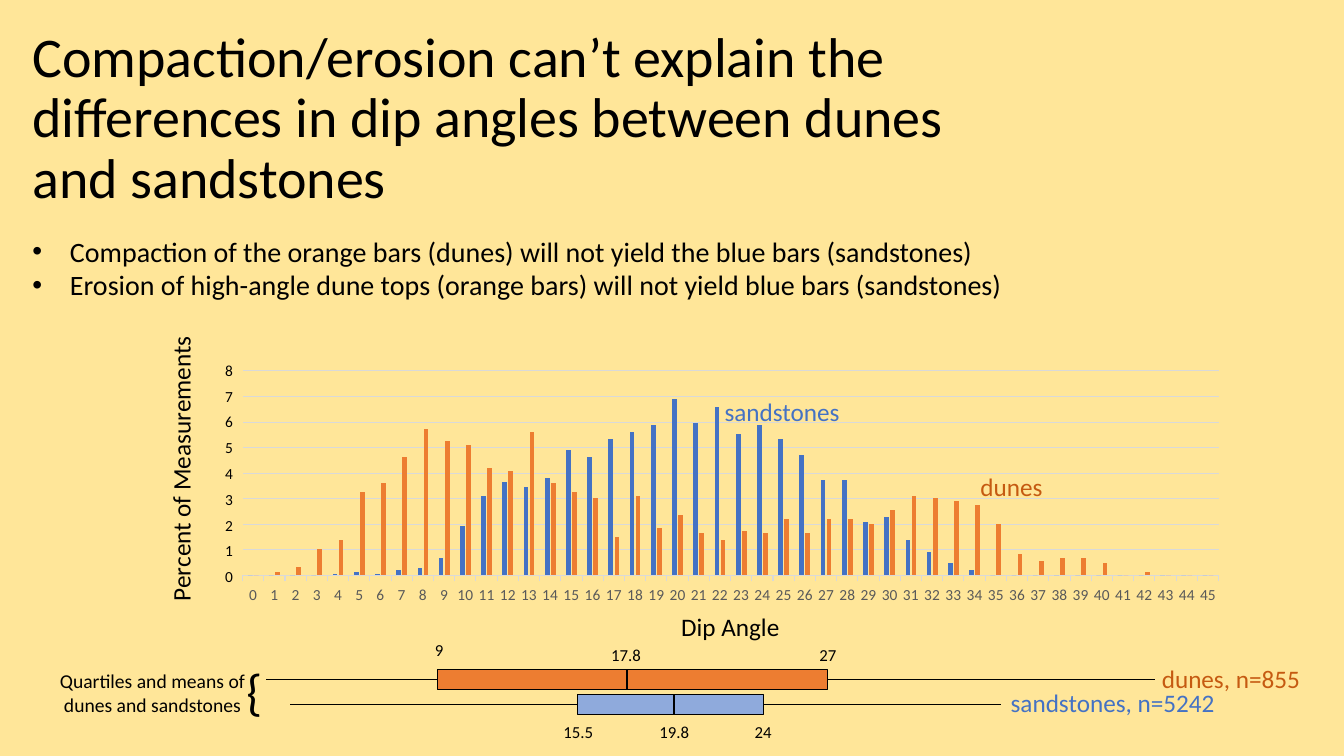
from lxml import etree
from pptx import Presentation
from pptx import util as u
from pptx.chart import data as cd
from pptx.dml.color import RGBColor
from pptx.enum import chart as ch, shapes, text
from pptx.oxml import ns, parse_xml

Cm, Pt = u.Cm, u.Pt
BLACK = RGBColor(0x00, 0x00, 0x00)
SAND = RGBColor(0xFF, 0xE6, 0x99)
GREY = RGBColor(0x59, 0x59, 0x59)
GRID = RGBColor(0xD9, 0xD9, 0xD9)
BLUE = RGBColor(0x44, 0x72, 0xC4)
PALE_BLUE = RGBColor(0x8F, 0xAA, 0xDC)
ORANGE = RGBColor(0xED, 0x7D, 0x31)
RUST = RGBColor(0xC5, 0x5A, 0x11)
FONT = "Calibri"
LEFT, CENTER, RIGHT = text.PP_ALIGN.LEFT, text.PP_ALIGN.CENTER, text.PP_ALIGN.RIGHT

TITLE = "Compaction/erosion can’t explain the differences in dip angles between dunes and sandstones"
BULLETS = [
    "Compaction of the orange bars (dunes) will not yield the blue bars (sandstones)",
    "Erosion of high-angle dune tops (orange bars) will not yield blue bars (sandstones)",
]
SERIES = [
    ("Series 1", BLUE, [
        0, 0, 0, 0, 1, 2, 1, 3, 4, 10, 28, 45, 53, 50, 55, 71, 67, 77, 81, 85, 100, 86, 95,
        80, 85, 77, 68, 54, 54, 30, 33, 20, 13, 7, 3, 0, 0, 0, 0, 0, 0, 0, 0, 0, 0, 0]),
    ("Series 2", ORANGE, [
        0, 2, 5, 15, 20, 47, 52, 67, 83, 76, 74, 61, 59, 81, 52, 47, 44, 22, 45, 27, 34, 24, 20,
        25, 24, 32, 24, 32, 32, 29, 37, 45, 44, 42, 40, 29, 12, 8, 10, 10, 7, 0, 2, 0, 0, 0]),
]
PLOT = {"x": 0.098, "y": 0.025, "w": 0.882, "h": 0.615}
PERCENT_MAX, PERCENT_UNIT = 8, 14.45
PERCENT_LEFT, PERCENT_ZERO, PERCENT_STEP = 5.23, 14.17, 0.65

# fmt: off
LABELS = [
    ("Dip Angle", (6.1, 15.29, 24.61, 1.02), 18, BLACK, CENTER, 0),
    ("Percent of Measurements", (0.86, 11.3, 7.39, 1.02), 18, BLACK, CENTER, 270),
    ("{", (5.72, 16.51, 1.14, 1.8), 36, BLACK, RIGHT, 0),
    ("Quartiles and means of dunes and sandstones", (1.14, 16.74, 5.41, 1.45), 14, BLACK, CENTER, 0),
    ("9", (10.52, 16, 1.09, 0.76), 12, BLACK, CENTER, 0),
    ("17.8", (15.09, 16.13, 1.37, 0.76), 12, BLACK, CENTER, 0),
    ("27", (20.32, 16.13, 1.09, 0.76), 12, BLACK, CENTER, 0),
    ("15.5", (13.89, 18.06, 1.37, 0.76), 12, BLACK, CENTER, 0),
    ("19.8", (16.31, 18.06, 1.37, 0.76), 12, BLACK, CENTER, 0),
    ("24", (18.69, 18.06, 1.09, 0.76), 12, BLACK, CENTER, 0),
    ("dunes, n=855", (29.03, 16.59, 4.47, 1.02), 18, RUST, LEFT, 0),
    ("sandstones, n=5242", (25.22, 17.2, 6.96, 1.02), 18, BLUE, LEFT, 0),
    ("dunes", (24.46, 11.76, 2.92, 1.02), 18, RUST, LEFT, 0),
    ("sandstones", (18.01, 9.86, 3.53, 1.02), 18, BLUE, LEFT, 0),
]
BOX_HEIGHT = 0.51
BOX_PLOTS = [
    {"fill": PALE_BLUE, "top": 17.5, "low": 7.32, "q1": 14.55, "mean": 16.99, "q3": 19.25, "high": 25.22},
    {"fill": ORANGE, "top": 16.87, "low": 6.71, "q1": 11.02, "mean": 15.8, "q3": 20.85, "high": 29.11},
]


def place(sp, box):
    for name, value in zip(("left", "top", "width", "height"), box):
        setattr(sp, name, Cm(value))


def write(p, words, size, color, **formats):
    r = p.add_run()
    r.text = words
    r.font.color.rgb = color
    for name, value in {"name": FONT, "size": Pt(size)}.items():
        setattr(r.font, name, value)
    for name, value in formats.items():
        setattr(p, name, value)


def add_label(s, words, box, size, color, align, turn):
    sp = s.shapes.add_textbox(*map(Cm, box))
    sp.rotation = turn
    tf = sp.text_frame
    tf.word_wrap = True
    tf.auto_size = text.MSO_AUTO_SIZE.SHAPE_TO_FIT_TEXT
    write(tf.paragraphs[0], words, size, color, alignment=align)


def add_line(s, start, end, width):
    line = s.shapes.add_connector(shapes.MSO_CONNECTOR.STRAIGHT, *map(Cm, start + end))
    line.line.color.rgb = BLACK
    line.line.width = Pt(width)
    etree.SubElement(line._element.spPr, ns.qn("a:effectLst"))
    return line


def add_box_plot(s, fill, top, low, q1, mean, q3, high):
    box = s.shapes.add_shape(
        shapes.MSO_SHAPE.RECTANGLE, Cm(q1), Cm(top), Cm(q3 - q1), Cm(BOX_HEIGHT))
    box.shadow.inherit = False
    box.fill.solid()
    box.fill.fore_color.rgb = fill
    box.line.color.rgb = BLACK
    box.line.width = Pt(1)
    middle = top + BOX_HEIGHT / 2
    add_line(s, (mean, top), (mean, top + BOX_HEIGHT), 1.5)
    add_line(s, (low, middle), (q1, middle), 0.5).end_connect(box, 1)
    add_line(s, (q3, middle), (high, middle), 0.5).begin_connect(box, 3)


def no_fill():
    return parse_xml(
        f'<c:spPr {ns.nsdecls("c", "a")}><a:noFill/><a:ln><a:noFill/></a:ln></c:spPr>')


def add_histogram(s):
    data = cd.CategoryChartData()
    data.categories = [str(angle) for angle in range(46)]
    for name, _, values in SERIES:
        data.add_series(name, values)
    chart = s.shapes.add_chart(
        ch.XL_CHART_TYPE.COLUMN_CLUSTERED, Cm(3.38), Cm(9.14), Cm(27.89), Cm(8.38), data).chart
    chart.has_legend = chart.has_title = False
    chart.font.name, chart.font.size, chart.font.color.rgb = FONT, Pt(10), BLACK

    plot = chart.plots[0]
    for name, value in {"gap_width": 219, "overlap": -27, "vary_by_categories": False}.items():
        setattr(plot, name, value)
    for series, (_, color, _) in zip(plot.series, SERIES):
        series.format.fill.solid()
        series.format.fill.fore_color.rgb = color

    angles, percents = chart.category_axis, chart.value_axis
    angles.major_tick_mark = ch.XL_TICK_MARK.OUTSIDE
    font = angles.tick_labels.font
    font.name, font.size, font.color.rgb = FONT, Pt(11), GREY
    scale = {"minimum_scale": 0, "maximum_scale": PERCENT_MAX * PERCENT_UNIT,
             "major_unit": PERCENT_UNIT, "has_major_gridlines": True, "visible": False}
    for name, value in scale.items():
        setattr(percents, name, value)
    percents.tick_labels.number_format = "0.00"
    percents.tick_labels.number_format_is_linked = False
    for line in (angles.format.line, percents.major_gridlines.format.line):
        line.color.rgb = GRID
        line.width = Pt(0.75)

    root = chart._chartSpace
    area = root.chart.plotArea
    for old in area.findall(ns.qn("c:layout")):
        area.remove(old)
    modes = "".join(f'<c:{key}Mode val="edge"/>' for key in "xy")
    sizes = "".join(f'<c:{key} val="{value}"/>' for key, value in PLOT.items())
    area.insert(0, parse_xml(
        f'<c:layout {ns.nsdecls("c")}><c:manualLayout><c:layoutTarget val="inner"/>'
        f'{modes}{sizes}</c:manualLayout></c:layout>'))
    area.append(no_fill())
    root.chart.addnext(no_fill())


def main():
    prs = Presentation()
    prs.slide_width, prs.slide_height = Cm(33.87), Cm(19.05)
    s = prs.slides.add_slide(prs.slide_layouts[1])
    s.background.fill.solid()
    s.background.fill.fore_color.rgb = SAND

    title, body = s.placeholders
    place(title, (0.56, 0.56, 24.64, 4.9))
    place(body, (0.56, 5.77, 25.1, 1.96))
    for sp in (title, body):
        sp.text_frame.word_wrap = True
        sp.text_frame.auto_size = text.MSO_AUTO_SIZE.NONE
    title.text_frame.vertical_anchor = text.MSO_ANCHOR.MIDDLE
    write(title.text_frame.paragraphs[0], TITLE, 40, BLACK, alignment=LEFT, line_spacing=0.9)
    tf = body.text_frame
    for i, words in enumerate(BULLETS):
        p = tf.add_paragraph() if i else tf.paragraphs[0]
        write(p, words, 20, BLACK, alignment=LEFT, space_before=Pt(0))
        pPr = p._p.get_or_add_pPr()
        pPr.set("marL", str(Cm(0.95)))
        pPr.set("indent", str(-Cm(0.95)))

    add_histogram(s)
    for percent in range(PERCENT_MAX + 1):
        box = (PERCENT_LEFT, PERCENT_ZERO - percent * PERCENT_STEP, 0.89, 0.74)
        add_label(s, str(percent), box, 11, BLACK, RIGHT, 0)
    for box_plot in BOX_PLOTS:
        add_box_plot(s, **box_plot)
    for label in LABELS:
        add_label(s, *label)
    prs.save("out.pptx")


if __name__ == "__main__":
    main()
